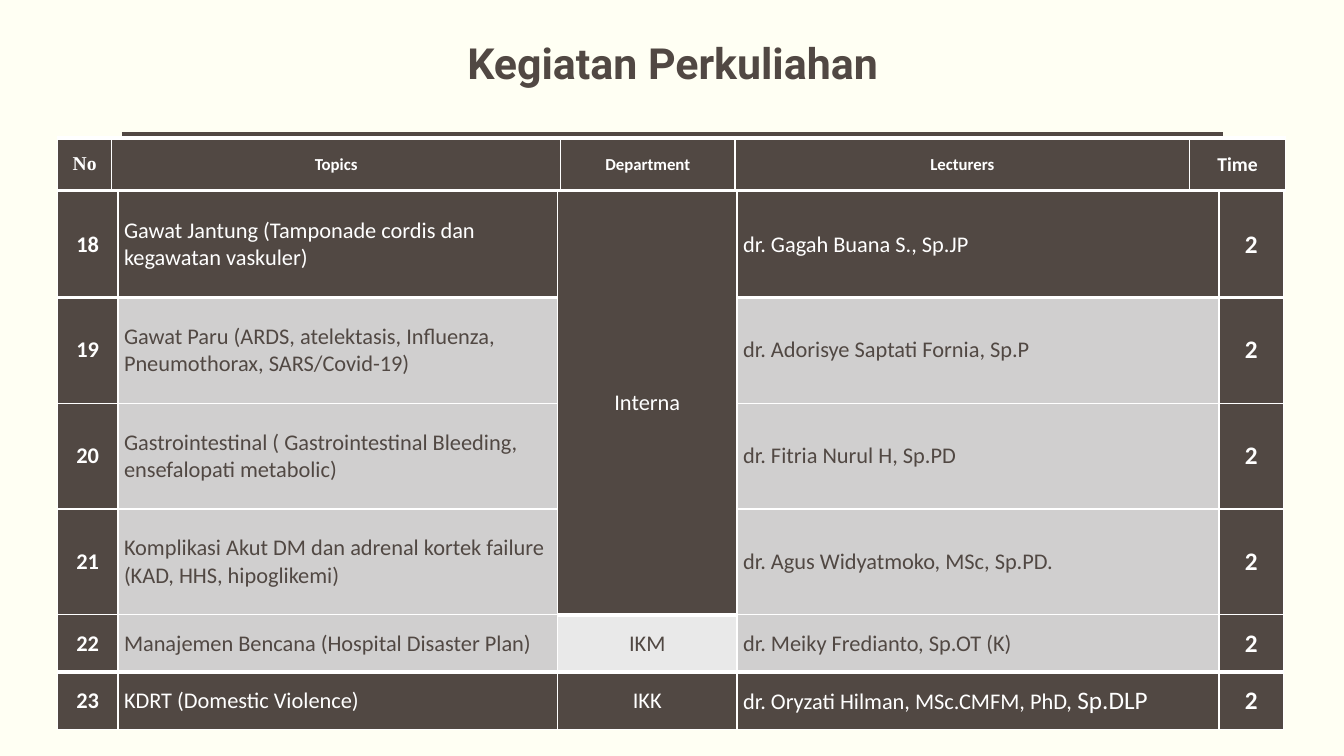
import dataclasses

import pptx
import pptx.dml.color
import pptx.enum.shapes
import pptx.enum.text
import pptx.oxml
import pptx.oxml.ns
import pptx.util

Inches = pptx.util.Inches
Pt = pptx.util.Pt
RGBColor = pptx.dml.color.RGBColor
PP_ALIGN = pptx.enum.text.PP_ALIGN
MIDDLE = pptx.enum.text.MSO_ANCHOR.MIDDLE


@dataclasses.dataclass(frozen=True)
class Theme:
    cream: str = "FFFFF3"
    brown: str = "514843"
    gray: str = "D0CFCF"
    pale: str = "E9E9E9"
    white: str = "FFFFFF"
    body_font: str = "Calibri"
    title_font: str = "Roboto"
    number_font: str = "Times New Roman"
    title_size: float = 30.6
    large: int = 18
    body: int = 16
    medium: int = 14
    small: int = 12
    thin: int = 1
    thick: int = 3


theme = Theme()


def write_text(para, text, size=theme.body, font=theme.body_font,
               color=theme.white, bold=False, align=PP_ALIGN.LEFT):
    para.alignment = align
    span = para.add_run()
    span.text = text
    span.font.size = Pt(size)
    span.font.name = font
    span.font.bold = bold
    span.font.color.rgb = RGBColor.from_string(color)


def style_cell(cell, fill, top=theme.thin, bottom=theme.thin):
    """Set fill, insets and white borders; top and bottom are widths in points."""
    cell.vertical_anchor = MIDDLE
    cell.margin_left = cell.margin_right = Inches(0.06)
    cell.margin_top = cell.margin_bottom = 0
    properties = cell._tc.get_or_add_tcPr()
    widths = {"L": theme.thin, "R": theme.thin, "T": top, "B": bottom}
    for side, width in widths.items():
        properties.append(pptx.oxml.parse_xml(
            f'<a:ln{side} {pptx.oxml.ns.nsdecls("a")} w="{Pt(width)}"><a:solidFill>'
            f'<a:srgbClr val="{theme.white}"/></a:solidFill></a:ln{side}>'))
    cell.fill.solid()
    cell.fill.fore_color.rgb = RGBColor.from_string(fill)


deck = pptx.Presentation()
deck.slide_width = Inches(13.33)
deck.slide_height = Inches(7.5)
page = deck.slides.add_slide(deck.slide_layouts[5])
page.background.fill.solid()
page.background.fill.fore_color.rgb = RGBColor.from_string(theme.cream)

# Rule under the title
rule = page.shapes.add_connector(
    pptx.enum.shapes.MSO_CONNECTOR.STRAIGHT,
    Inches(1.21), Inches(1.33), Inches(12.13), Inches(1.33))
rule.line.color.rgb = RGBColor.from_string(theme.brown)
rule.line.width = Pt(theme.thick)
rule.element.spPr.append(
    pptx.oxml.parse_xml(f'<a:effectLst {pptx.oxml.ns.nsdecls("a")}/>'))

# Title
title = page.shapes.title
title.left, title.top = Inches(2.17), Inches(0.42)
title.width, title.height = Inches(9), Inches(0.52)
title.text_frame.auto_size = pptx.enum.text.MSO_AUTO_SIZE.NONE
title.text_frame.vertical_anchor = MIDDLE
title_para = title.text_frame.paragraphs[0]
title_para.line_spacing = 0.7
write_text(title_para, "Kegiatan Perkuliahan", size=theme.title_size,
           font=theme.title_font, color=theme.brown, bold=True,
           align=PP_ALIGN.CENTER)

# Both tables share their left edge and width
header_widths = [0.54, 4.45, 1.73, 4.51, 0.95]
header_heights = [0.52]
body_widths = [0.6, 4.36, 1.78, 4.78, 0.64]
body_heights = [1.05] * 4 + [0.57] * 2
tables = []
for top, widths, heights in ((1.9, body_widths, body_heights),
                             (1.37, header_widths, header_heights)):
    frame = page.shapes.add_table(
        len(heights), len(widths), Inches(0.57), Inches(top),
        Inches(12.17), Inches(sum(heights)))
    table = frame.table
    table.first_row = table.horz_banding = False
    for column, width in zip(table.columns, widths):
        column.width = Inches(width)
    for row, height in zip(table.rows, heights):
        row.height = Inches(height)
    tables.append(table)
schedule, header = tables

# Column headings
headings = [
    ("No", theme.medium, theme.number_font),
    ("Topics", theme.small, theme.body_font),
    ("Department", theme.small, theme.body_font),
    ("Lecturers", theme.small, theme.body_font),
    ("Time", theme.medium, theme.body_font),
]
for cell, (text, size, font) in zip(header.rows[0].cells, headings):
    style_cell(cell, theme.brown, top=theme.thick, bottom=theme.thick)
    write_text(cell.text_frame.paragraphs[0], text, size=size, font=font,
               bold=True, align=PP_ALIGN.CENTER)

# Lectures
lectures = [
    ("Gawat Jantung (Tamponade cordis dan kegawatan vaskuler)",
     "Interna", "dr. Gagah Buana S., Sp.JP"),
    ("Gawat Paru (ARDS, atelektasis, Influenza, Pneumothorax, SARS/Covid-19)",
     "", "dr. Adorisye Saptati Fornia, Sp.P"),
    ("Gastrointestinal ( Gastrointestinal Bleeding, ensefalopati metabolic)",
     "", "dr. Fitria Nurul H, Sp.PD"),
    ("Komplikasi Akut DM dan adrenal kortek failure (KAD, HHS, hipoglikemi)",
     "", "dr. Agus Widyatmoko, MSc, Sp.PD."),
    ("Manajemen Bencana (Hospital Disaster Plan)",
     "IKM", "dr. Meiky Fredianto, Sp.OT (K)"),
    ("KDRT (Domestic Violence)",
     "IKK", "dr. Oryzati Hilman, MSc.CMFM, PhD, "),
]
first, last = 0, len(lectures) - 1
schedule.cell(0, 2).merge(schedule.cell(3, 2))
for index, (topic, department, lecturer) in enumerate(lectures):
    dark_row = index in (first, last)
    text_color = theme.white if dark_row else theme.brown
    row_fill = theme.brown if dark_row else theme.gray
    department_fill = theme.pale if department == "IKM" else theme.brown
    top = theme.thick if index in (first + 1, last) else theme.thin
    bottom = theme.thick if index in (first, last - 1) else theme.thin
    columns = [
        (str(18 + index), theme.brown, theme.white, theme.body, True, PP_ALIGN.CENTER),
        (topic, row_fill, text_color, theme.body, False, PP_ALIGN.LEFT),
        (department, department_fill, text_color, theme.body, False, PP_ALIGN.CENTER),
        (lecturer, row_fill, text_color, theme.body, False, PP_ALIGN.LEFT),
        ("2", theme.brown, theme.white, theme.large, True, PP_ALIGN.CENTER),
    ]
    for position, (text, fill, color, size, bold, align) in enumerate(columns):
        cell = schedule.cell(index, position)
        below_merge = position == 2 and department == "IKM"
        style_cell(cell, fill, top=theme.thick if below_merge else top, bottom=bottom)
        if text:
            write_text(cell.text_frame.paragraphs[0], text, size=size,
                       color=color, bold=bold, align=align)
write_text(schedule.cell(last, 3).text_frame.paragraphs[0], "Sp.DLP",
           size=theme.large)

deck.save("out.pptx")
